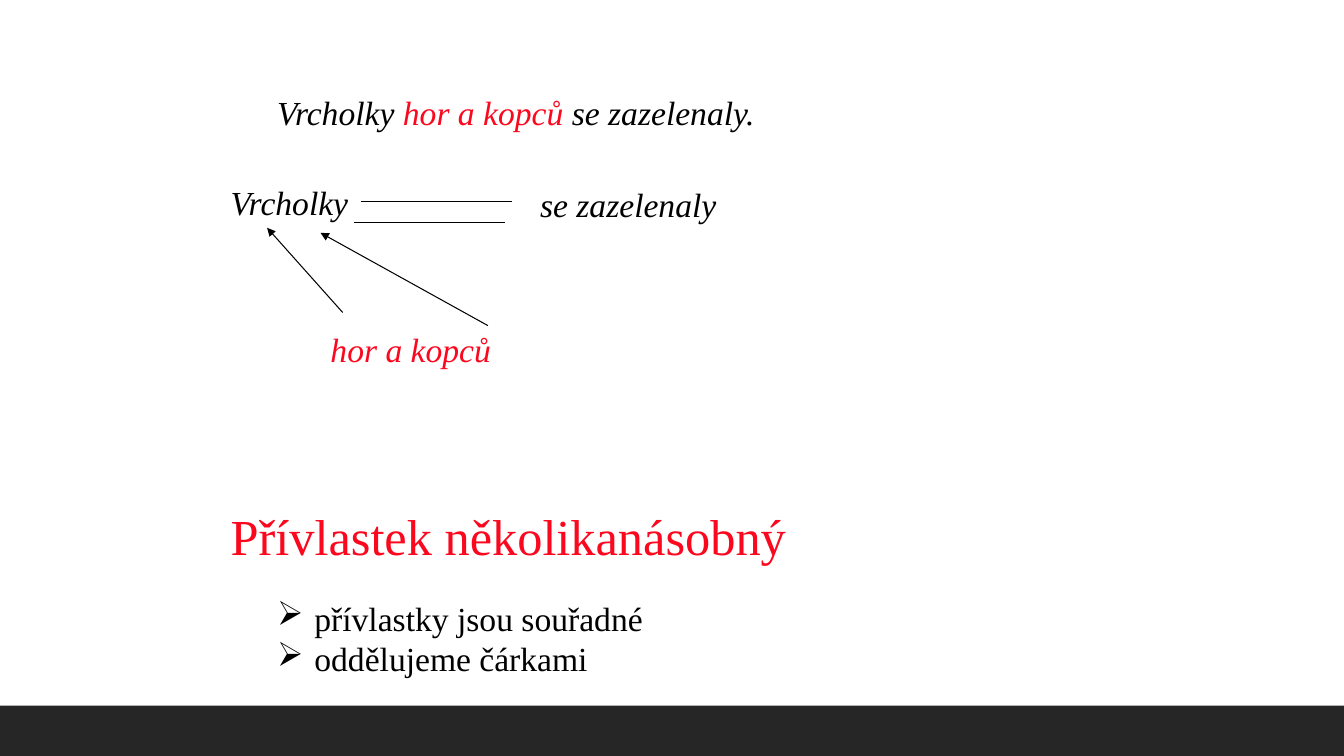
"""Build a Czech grammar slide about the compound attribute."""
from dataclasses import dataclass

from lxml.etree import SubElement
from pptx import Presentation
from pptx.dml.color import RGBColor
from pptx.enum.shapes import MSO_CONNECTOR as Connector, MSO_SHAPE as Shape
from pptx.enum.text import MSO_AUTO_SIZE as AutoSize
from pptx.oxml.ns import qn
from pptx.slide import Slide
from pptx.util import Inches, Length, Pt

WIDTH, HEIGHT = Inches(13.333), Inches(7.5)
COLUMNS, ROWS = 40, 30
FONT = "Times New Roman"
COLORS = {"black": "000000", "red": "FB071E", "band": "262626"}
BULLET_INDENT = Inches(0.37)


@dataclass(frozen=True)
class Box:
    column: float
    row: float
    columns: float
    rows: float

    def lengths(self) -> tuple[Length, Length, Length, Length]:
        return across(self.column), down(self.row), across(self.columns), down(self.rows)


@dataclass(frozen=True)
class Run:
    text: str
    color: str = "black"


@dataclass(frozen=True)
class Label:
    box: Box
    paragraphs: tuple[tuple[Run, ...], ...]
    size: int = 24
    italic: bool = True
    bullet: str = ""


@dataclass(frozen=True)
class Line:
    start: tuple[float, float]
    end: tuple[float, float]
    arrow: bool = False


LABELS = (
    Label(Box(6.57, 19.84, 17.31, 2.84),
          ((Run("Přívlastek několikanásobný", "red"),),), size=36, italic=False),
    Label(Box(7.95, 3.44, 15.39, 2),
          ((Run("Vrcholky "), Run("hor a kopců", "red"), Run(" se zazelenaly.")),)),
    Label(Box(6.57, 7.04, 4.14, 2), ((Run("Vrcholky"),),)),
    Label(Box(15.78, 7.12, 5.91, 2), ((Run("se zazelenaly"),),)),
    Label(Box(9.54, 12.84, 5.55, 2), ((Run("hor a kopců", "red"),),)),
    Label(Box(7.95, 23.52, 11.52, 3.64),
          ((Run("přívlastky jsou souřadné"),), (Run("oddělujeme čárkami"),)),
          italic=False, bullet="➢"),
)
LINES = (
    Line((10.74, 8), (15.24, 8)),
    Line((10.53, 8.84), (15.03, 8.84)),
    Line((10.2, 12.4), (7.95, 9.04), arrow=True),
    Line((14.52, 12.92), (9.54, 9.24), arrow=True),
)


def across(columns: float) -> Length:
    return Length(round(WIDTH * columns / COLUMNS))


def down(rows: float) -> Length:
    return Length(round(HEIGHT * rows / ROWS))


def rgb(name: str) -> RGBColor:
    return RGBColor.from_string(COLORS[name])


def add_band(slide: Slide, box: Box) -> None:
    shape = slide.shapes.add_shape(Shape.RECTANGLE, *box.lengths())
    shape.shadow.inherit = False
    shape.fill.solid()
    shape.fill.fore_color.rgb = rgb("band")
    shape.line.fill.background()


def add_text(slide: Slide, box: Box, paragraphs: tuple[tuple[Run, ...], ...], *,
             size: int, italic: bool, bullet: str) -> None:
    frame = slide.shapes.add_textbox(*box.lengths()).text_frame
    frame.word_wrap = False
    frame.auto_size = AutoSize.SHAPE_TO_FIT_TEXT
    for index, runs in enumerate(paragraphs):
        paragraph = frame.add_paragraph() if index else frame.paragraphs[0]
        for part in runs:
            run = paragraph.add_run()
            run.text = part.text
            run.font.name = FONT
            run.font.size = Pt(size)
            run.font.italic = italic
            run.font.color.rgb = rgb(part.color)
        if bullet:
            properties = paragraph._p.get_or_add_pPr()
            properties.set("marL", str(BULLET_INDENT))
            properties.set("indent", str(-BULLET_INDENT))
            SubElement(properties, qn("a:buChar"), char=bullet)


def add_line(slide: Slide, line: Line) -> None:
    (left, top), (right, bottom) = line.start, line.end
    connector = slide.shapes.add_connector(
        Connector.STRAIGHT, across(left), down(top), across(right), down(bottom))
    connector.line.color.rgb = rgb("black")
    connector.line.width = Pt(0.75)
    if line.arrow:
        SubElement(connector.line._get_or_add_ln(), qn("a:tailEnd"), type="triangle")
    SubElement(connector._element.spPr, qn("a:effectLst"))


def main() -> None:
    presentation = Presentation()
    presentation.slide_width, presentation.slide_height = WIDTH, HEIGHT
    slide = presentation.slides.add_slide(presentation.slide_layouts[6])
    add_band(slide, Box(0, 28, COLUMNS, 2))
    for label in LABELS:
        add_text(slide, label.box, label.paragraphs, size=label.size,
                 italic=label.italic, bullet=label.bullet)
    for line in LINES:
        add_line(slide, line)
    presentation.save("out.pptx")


if __name__ == "__main__":
    main()
